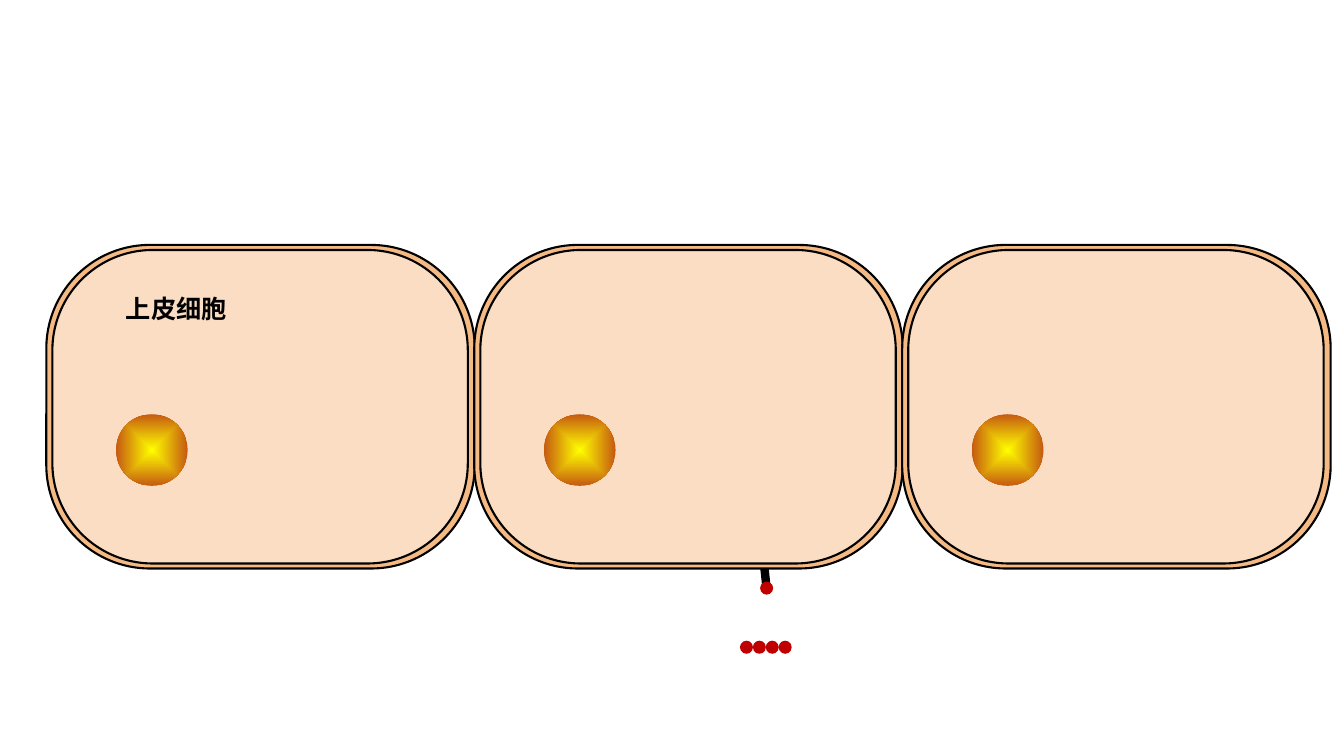
from dataclasses import dataclass

from lxml.etree import SubElement
from pptx import Presentation
from pptx.dml.color import RGBColor
from pptx.enum.shapes import MSO_CONNECTOR, MSO_SHAPE
from pptx.enum.text import MSO_AUTO_SIZE
from pptx.oxml import parse_xml
from pptx.oxml.ns import nsdecls, qn
from pptx.util import Inches, Pt

SLIDE_W, SLIDE_H = Inches(13.33), Inches(7.5)


@dataclass(frozen=True)
class Theme:
    ink: str = "000000"
    membrane: str = "F5B983"
    cytoplasm: str = "FADDC2"
    nucleus_core: str = "FFFF00"
    nucleus_rim: str = "C55A11"
    bead: str = "C00000"
    font: str = "Noto Sans CJK SC"
    label_pt: float = 18
    outline_pt: float = 1.5
    stem_pt: float = 6
    corner: float = 0.32


@dataclass(frozen=True)
class Box:
    """Place and size in percent of the slide's width and height."""
    x: float
    y: float
    w: float
    h: float

    def shifted(self, dx: float) -> "Box":
        return Box(self.x + dx, self.y, self.w, self.h)

    def emu(self) -> tuple[int, int, int, int]:
        return across(self.x), down(self.y), across(self.w), down(self.h)


THEME = Theme()

# Epithelial cells, left to right
CELL_COUNT, CELL_PITCH = 3, 31.84
MEMBRANE = Box(3.45, 32.4, 31.88, 42.8)
CYTOPLASM = Box(3.9, 33.07, 30.91, 41.47)
NUCLEUS = Box(8.63, 54.8, 5.33, 9.47)
LABEL = Box(8.63, 38.13, 9.08, 5.33)

# Receptor stem and red beads
STEM_FROM, STEM_TO = (57.01, 77.33), (56.86, 74.8)
STEM_BEAD = Box(56.56, 76.93, 0.97, 1.73)
FREE_BEAD = Box(55.06, 84.75, 0.97, 1.73)
FREE_BEAD_COUNT, FREE_BEAD_PITCH = 4, 0.96


def across(share: float) -> int:
    return round(SLIDE_W * share / 100)


def down(share: float) -> int:
    return round(SLIDE_H * share / 100)


def add_filled(shapes, kind: MSO_SHAPE, box: Box, color: str, outlined: bool = False):
    sp = shapes.add_shape(kind, *box.emu())
    sp.shadow.inherit = False
    sp.fill.solid()
    sp.fill.fore_color.rgb = RGBColor.from_string(color)
    if outlined:
        sp.line.color.rgb = RGBColor.from_string(THEME.ink)
        sp.line.width = Pt(THEME.outline_pt)
    else:
        sp.line.fill.background()
    return sp


def set_radial_fill(sp, core: str, rim: str) -> None:
    solid = sp.element.spPr.find(qn("a:solidFill"))
    solid.getparent().replace(solid, parse_xml(
        f'<a:gradFill {nsdecls("a")} rotWithShape="1"><a:gsLst>'
        f'<a:gs pos="0"><a:srgbClr val="{core}"/></a:gs>'
        f'<a:gs pos="100000"><a:srgbClr val="{rim}"/></a:gs></a:gsLst>'
        '<a:path path="shape"><a:fillToRect l="50000" t="50000" r="50000" b="50000"/>'
        '</a:path></a:gradFill>'))


def add_cell(shapes, dx: float) -> None:
    cell = shapes.add_group_shape().shapes
    for box, color in ((MEMBRANE, THEME.membrane), (CYTOPLASM, THEME.cytoplasm)):
        sp = add_filled(cell, MSO_SHAPE.ROUNDED_RECTANGLE, box.shifted(dx), color, outlined=True)
        sp.adjustments[0] = THEME.corner
    nucleus = add_filled(cell, MSO_SHAPE.OVAL, NUCLEUS.shifted(dx), THEME.nucleus_rim)
    set_radial_fill(nucleus, THEME.nucleus_core, THEME.nucleus_rim)


def add_receptor(shapes) -> None:
    receptor = shapes.add_group_shape().shapes
    (x1, y1), (x2, y2) = STEM_FROM, STEM_TO
    stem = receptor.add_connector(
        MSO_CONNECTOR.STRAIGHT, across(x1), down(y1), across(x2), down(y2))
    stem.line.color.rgb = RGBColor.from_string(THEME.ink)
    stem.line.width = Pt(THEME.stem_pt)
    SubElement(stem.element.spPr, qn("a:effectLst"))
    add_filled(receptor, MSO_SHAPE.OVAL, STEM_BEAD, THEME.bead)


def add_free_beads(shapes) -> None:
    beads = shapes.add_group_shape().shapes
    for i in range(FREE_BEAD_COUNT):
        add_filled(beads, MSO_SHAPE.OVAL, FREE_BEAD.shifted(i * FREE_BEAD_PITCH), THEME.bead)


def add_label(shapes, box: Box, text: str) -> None:
    tf = shapes.add_textbox(*box.emu()).text_frame
    tf.word_wrap = True
    tf.auto_size = MSO_AUTO_SIZE.SHAPE_TO_FIT_TEXT
    p = tf.paragraphs[0]
    r = p.add_run()
    r.text = text
    r.font.size = Pt(THEME.label_pt)
    r.font.bold = True
    r.font.name = THEME.font
    r.font.color.rgb = RGBColor.from_string(THEME.ink)
    # Chinese glyphs take the East Asian typeface
    SubElement(r.font._element, qn("a:ea"), typeface=THEME.font)


def main() -> None:
    prs = Presentation()
    prs.slide_width, prs.slide_height = SLIDE_W, SLIDE_H
    shapes = prs.slides.add_slide(prs.slide_layouts[6]).shapes

    # Receptor and beads lie behind the cells
    add_receptor(shapes)
    add_free_beads(shapes)

    # Row of cells and its label
    for i in range(CELL_COUNT):
        add_cell(shapes, i * CELL_PITCH)
    add_label(shapes, LABEL, "上皮细胞")

    prs.save("out.pptx")


if __name__ == "__main__":
    main()
